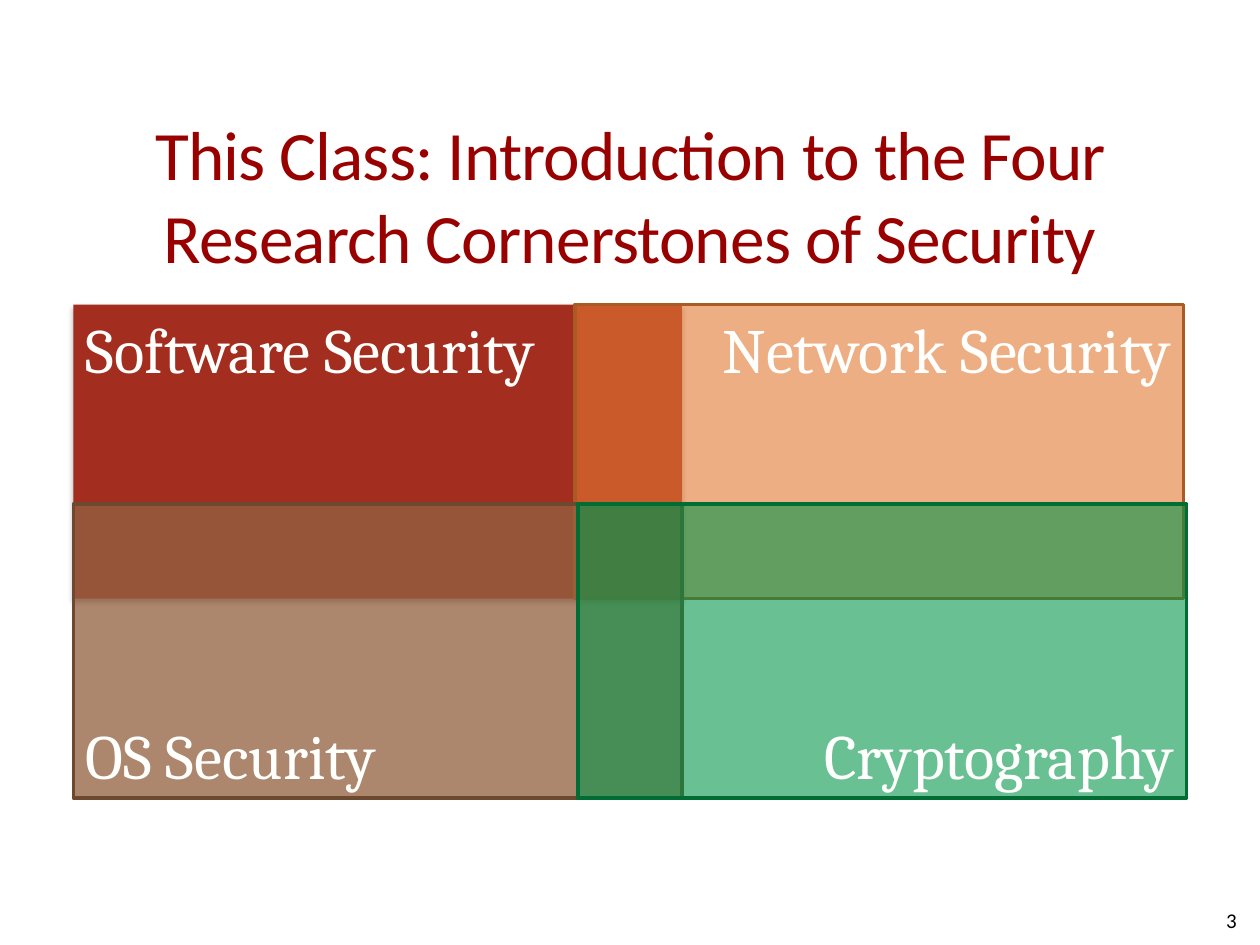
from lxml.etree import SubElement
from pptx import Presentation
from pptx.dml.color import RGBColor
from pptx.enum.shapes import MSO_SHAPE
from pptx.enum.text import MSO_ANCHOR, MSO_AUTO_SIZE, PP_ALIGN
from pptx.oxml.ns import qn
from pptx.util import Cm, Pt

TITLE = "This Class: Introduction to the Four Research Cornerstones of Security"
SLIDE_NUMBER = "3"

DARK_RED = RGBColor(0x99, 0x00, 0x00)
BLACK = RGBColor(0x00, 0x00, 0x00)
OFF_WHITE = RGBColor(0xFF, 0xFF, 0xFE)
BRICK = RGBColor(0xA3, 0x2D, 0x1F)
ORANGE, ORANGE_EDGE = RGBColor(0xE4, 0x79, 0x32), RGBColor(0xA9, 0x5A, 0x25)
BROWN, BROWN_EDGE = RGBColor(0x93, 0x62, 0x41), RGBColor(0x6D, 0x49, 0x30)
GREEN, GREEN_EDGE = RGBColor(0x00, 0x94, 0x46), RGBColor(0x00, 0x6D, 0x34)

# Overlapping areas, in cm: label, left, row, fill, opacity in %, edge
LEFT_X = 1.48
AREAS = [
    ("Software Security", LEFT_X, 0, BRICK, 100, None),
    ("Network Security", 11.59, 0, ORANGE, 60, ORANGE_EDGE),
    ("OS Security", LEFT_X, 1, BROWN, 76, BROWN_EDGE),
    ("Cryptography", 11.65, 1, GREEN, 59, GREEN_EDGE),
]
ROW_TOPS = (6.14, 10.16)
ROW_ANCHORS = (MSO_ANCHOR.TOP, MSO_ANCHOR.BOTTOM)
AREA_WIDTH, AREA_HEIGHT = 12.27, 5.93


def write(text_frame, text, font_name, size, color, alignment):
    text_frame.text = text
    text_frame.word_wrap = True
    paragraph = text_frame.paragraphs[0]
    paragraph.alignment = alignment
    font = paragraph.runs[0].font
    font.name, font.size, font.color.rgb = font_name, Pt(size), color


def set_opacity(shape, percent):
    color = shape.fill._xPr.find(qn("a:solidFill"))[0]
    SubElement(color, qn("a:alpha"), val=str(percent * 1000))


def add_soft_shadow(shape):
    effects = shape._element.spPr.find(qn("a:effectLst"))
    shadow = SubElement(effects, qn("a:outerShdw"), blurRad=str(Pt(3.1)),
                        dist=str(Pt(1.8)), dir="5400000", rotWithShape="0")
    color = SubElement(shadow, qn("a:srgbClr"), val=str(BLACK))
    SubElement(color, qn("a:alpha"), val="35000")


def add_area(shapes, label, left, row, fill, opacity, edge):
    shape = shapes.add_shape(MSO_SHAPE.RECTANGLE, Cm(left), Cm(ROW_TOPS[row]),
                             Cm(AREA_WIDTH), Cm(AREA_HEIGHT))
    shape.shadow.inherit = False
    shape.fill.solid()
    shape.fill.fore_color.rgb = fill
    if edge is None:
        shape.line.fill.background()
        add_soft_shadow(shape)
    else:
        set_opacity(shape, opacity)
        shape.line.color.rgb = edge
        shape.line.width = Pt(2)
    alignment = PP_ALIGN.LEFT if left == LEFT_X else PP_ALIGN.RIGHT
    write(shape.text_frame, label, "Cambria", 36, OFF_WHITE, alignment)
    shape.text_frame.vertical_anchor = ROW_ANCHORS[row]


def add_title(slide):
    title = slide.shapes.title
    title.left, title.top = Cm(1.27), Cm(2.32)
    title.width, title.height = Cm(22.86), Cm(3.18)
    frame = title.text_frame
    write(frame, TITLE, "Calibri", 39.6, DARK_RED, PP_ALIGN.CENTER)
    frame.auto_size = MSO_AUTO_SIZE.NONE
    frame.vertical_anchor = MSO_ANCHOR.MIDDLE
    frame.margin_left = frame.margin_right = 0
    frame.paragraphs[0].runs[0].font._element.set("spc", "-50")


def add_slide_number(slide):
    box = slide.shapes.add_textbox(Cm(19.26), Cm(18.03), Cm(5.92), Cm(1.02))
    write(box.text_frame, SLIDE_NUMBER, "Calibri", 12, BLACK, PP_ALIGN.RIGHT)
    box.text_frame.vertical_anchor = MSO_ANCHOR.MIDDLE


def main():
    presentation = Presentation()
    presentation.slide_width, presentation.slide_height = Cm(25.4), Cm(19.05)
    title_only = presentation.slide_layouts[5]
    slide = presentation.slides.add_slide(title_only)
    add_title(slide)
    add_slide_number(slide)
    cornerstones = slide.shapes.add_group_shape()
    for area in AREAS:
        add_area(cornerstones.shapes, *area)
    presentation.save("out.pptx")


if __name__ == "__main__":
    main()
